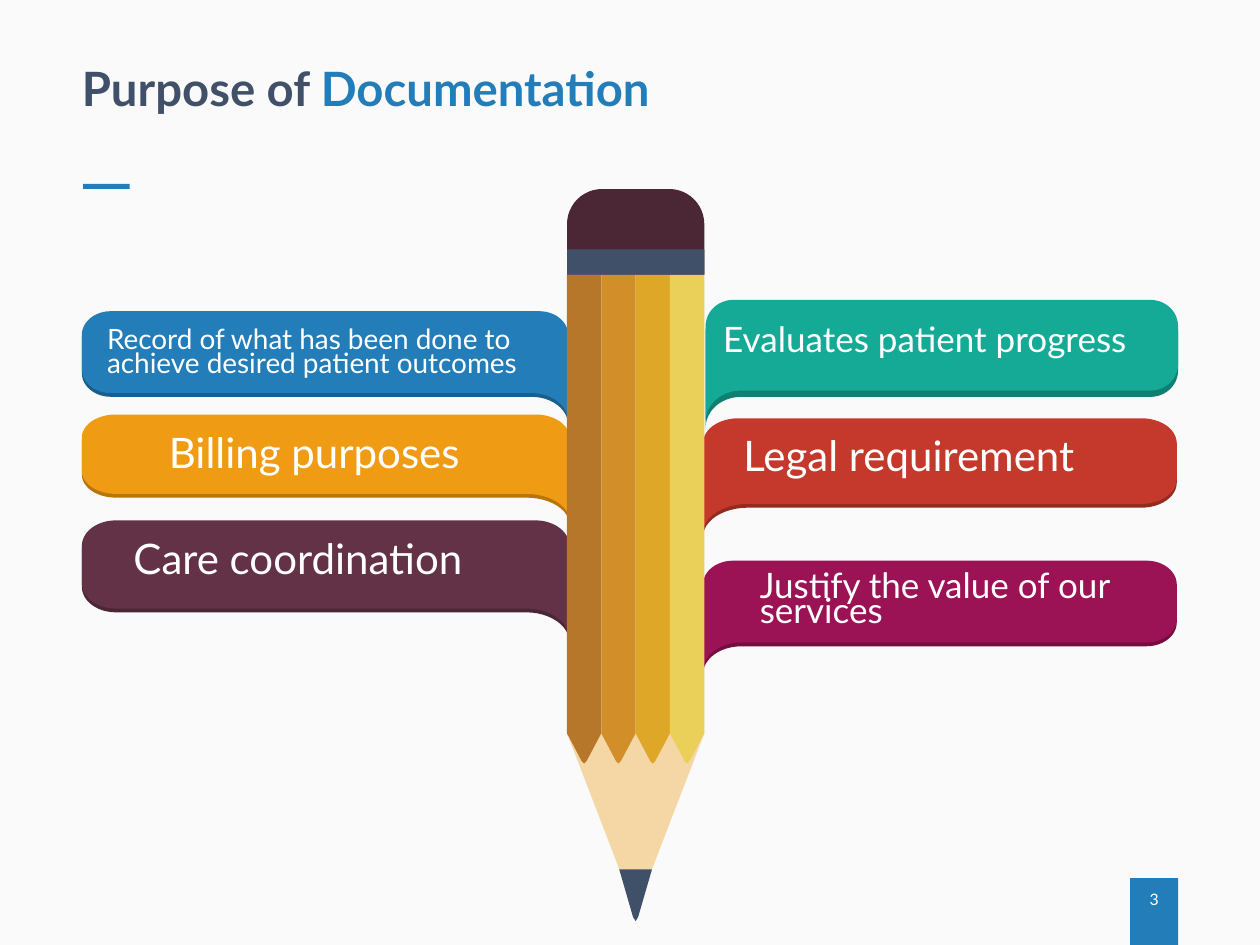
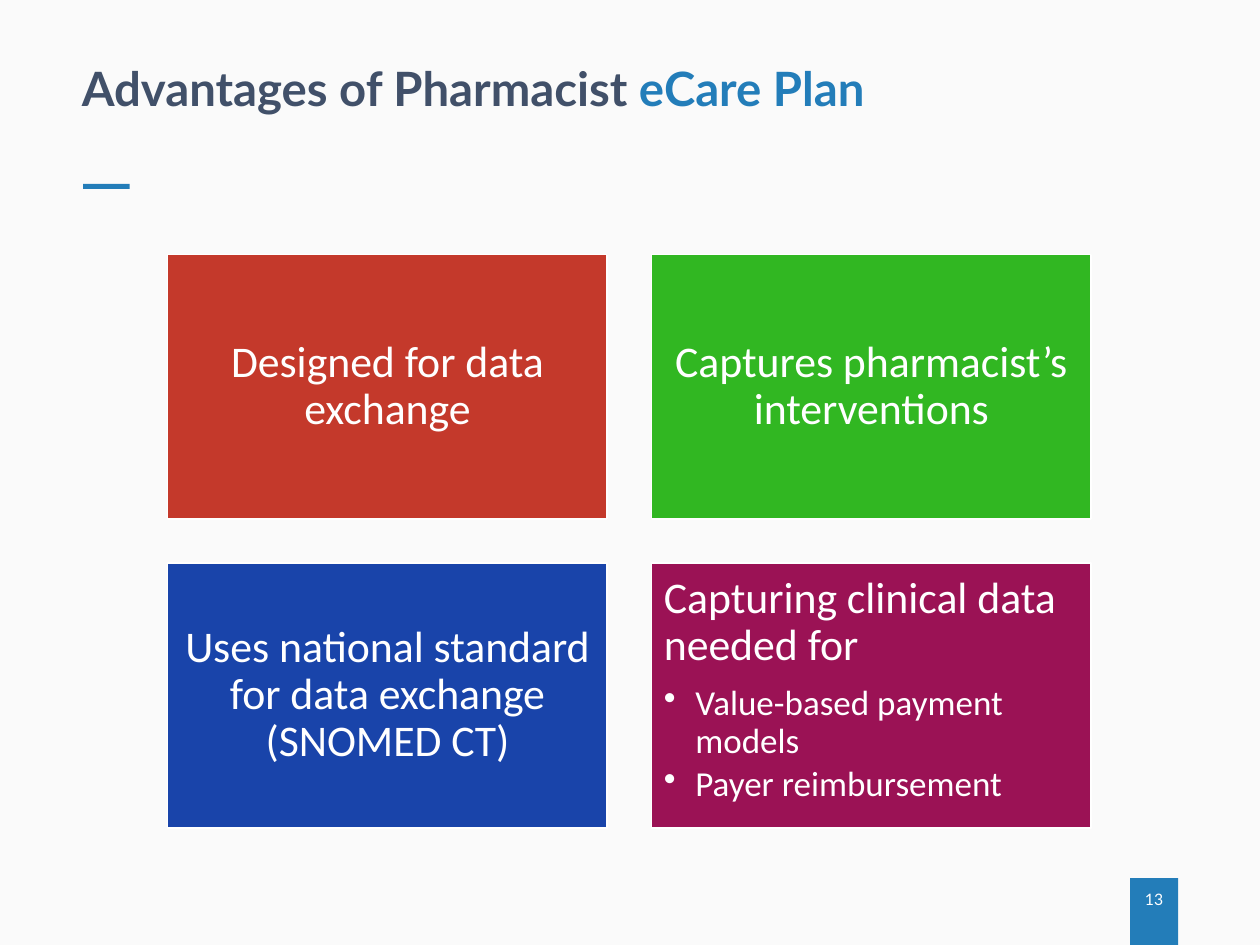
from math import cos, radians, sin

from lxml.etree import SubElement
from pptx import Presentation
from pptx.dml.color import RGBColor
from pptx.enum.shapes import MSO_SHAPE
from pptx.enum.text import MSO_ANCHOR, PP_ALIGN
from pptx.oxml.ns import qn
from pptx.util import Inches, Pt

WHITE, PAPER, SLATE, BLUE = "FFFFFF", "FAFAFA", "415069", "237DB9"
PLUM_DARK, RED, MAGENTA = "4B2634", "C4392B", "9B1255"

# outer edge, inner edge, top, corner width, body height, drop, shade, colour
BANNERS = [
    (0.65, 4.52, 3.29, 0.27, 0.63, 0.03, "B7750C", "F09B14"),
    (0.65, 4.52, 4.13, 0.27, 0.70, 0.03, PLUM_DARK, "643246"),
    (9.35, 5.60, 2.38, 0.22, 0.72, 0.05, "0F7F71", "14AA96"),
    (9.34, 5.58, 3.32, 0.28, 0.68, 0.03, "932B20", RED),
    (9.34, 5.58, 4.45, 0.24, 0.65, 0.03, "740D40", MAGENTA),
    (0.65, 4.51, 2.47, 0.23, 0.65, 0.03, "1A5E8B", BLUE),
]

# left, top, width, height, size, wording
PURPOSES = [
    (0.85, 2.62, 3.53, 0.39, 16, "Record of what has been done to achieve desired patient outcomes"),
    (1.34, 3.59, 2.83, 0.2, 24, "Billing purposes"),
    (1.06, 4.43, 3.4, 0.2, 24, "Care coordination"),
    (5.74, 2.66, 4.03, 0.2, 20, "Evaluates patient progress"),
    (5.9, 3.61, 3.29, 0.22, 24, "Legal requirement"),
    (6.03, 4.61, 3.02, 0.39, 20, "Justify the value of our services"),
]

# colour, heading, bullets
ADVANTAGES = [
    (RED, "Designed for data exchange", []),
    ("31B722", "Captures pharmacist’s interventions", []),
    ("1944AA", "Uses national standard for data exchange (SNOMED CT)", []),
    (MAGENTA, "Capturing clinical data needed for",
     ["Value-based payment models", "Payer reimbursement"]),
]


def rgb(hex_colour):
    return RGBColor.from_string(hex_colour)


def arc(center_x, center_y, radius_x, radius_y, start, end, steps=12):
    """Points along an elliptical arc; angles in degrees, clockwise from the right."""
    angles = [radians(start + (end - start) * i / steps) for i in range(steps + 1)]
    return [(center_x + radius_x * cos(a), center_y + radius_y * sin(a)) for a in angles]


def banner_outline(outer, inner, top, corner, body):
    """Rounded band whose inner end runs down into a curved tail."""
    side = 1 if inner > outer else -1
    corner_x, corner_y = side * corner, 0.29 * body
    tail_x, tail_y = 1.27 * corner_x, 0.34 * body
    bottom = top + body
    return (arc(inner - corner_x, top + corner_y, corner_x, corner_y, 0, -90)
            + arc(outer + corner_x, top + corner_y, corner_x, corner_y, -90, -180)
            + arc(outer + corner_x, bottom - corner_y, corner_x, corner_y, 180, 90)
            + arc(inner - tail_x, bottom + tail_y, tail_x, tail_y, -90, 0))


class SlideWriter:
    """Holds the deck, its style and the slide being drawn."""

    def __init__(self):
        self.deck = Presentation()
        self.deck.slide_width, self.deck.slide_height = Inches(10), Inches(7.5)
        self.page = None

    def start_page(self, number, title, accent):
        self.page = self.deck.slides.add_slide(self.deck.slide_layouts[6])
        fill = self.page.background.fill
        fill.solid()
        fill.fore_color.rgb = rgb(PAPER)
        self.shape(8.97, 6.97, 0.38, 0.53, BLUE)
        para = self.text(8.98, 7.06, 0.36, 0.15, 9, str(number))
        para.alignment = PP_ALIGN.CENTER
        self.shape(0.66, 1.46, 0.37, 0.04, BLUE)
        para = self.text(0.65, 0.52, 8.7, 0.53, 27, title)
        para.line_spacing, para.space_before = 0.9, Pt(9.2)
        para.add_run().text = accent
        self.style(para, 27, SLATE)
        para.runs[1].font.color.rgb = rgb(BLUE)
        for span in para.runs:
            span.font.bold = True

    def style(self, para, size, colour=WHITE, font="Lato"):
        for span in para.runs:
            span.font.size, span.font.name = Pt(size), font
            span.font.color.rgb = rgb(colour)

    def frame(self, shape, margin=0):
        frame = shape.text_frame
        frame.word_wrap = True
        frame.margin_left = frame.margin_right = Inches(margin)
        frame.margin_top = frame.margin_bottom = Inches(margin)
        return frame

    def text(self, left, top, width, height, size, wording):
        box = self.page.shapes.add_textbox(
            Inches(left), Inches(top), Inches(width), Inches(height))
        frame = self.frame(box)
        frame.text = wording
        para = frame.paragraphs[0]
        self.style(para, size)
        return para

    def paint(self, shape, colour):
        shape.shadow.inherit = False
        shape.fill.solid()
        shape.fill.fore_color.rgb = rgb(colour)
        shape.line.fill.background()
        return shape

    def shape(self, left, top, width, height, colour, preset=MSO_SHAPE.RECTANGLE):
        shape = self.page.shapes.add_shape(
            preset, Inches(left), Inches(top), Inches(width), Inches(height))
        return self.paint(shape, colour)

    def outline(self, points, colour):
        first, *rest = [(Inches(x), Inches(y)) for x, y in points]
        builder = self.page.shapes.build_freeform(*first)
        builder.add_line_segments(rest, close=True)
        return self.paint(builder.convert_to_shape(), colour)

    def banner(self, outer, inner, top, corner, body, drop, shade, colour):
        for offset, layer_colour in ((drop, shade), (0, colour)):
            points = banner_outline(outer, inner, top + offset, corner, body)
            self.outline(points, layer_colour)

    def pencil(self, left, width, top, shoulder):
        right, middle = left + width, left + width / 2
        self.outline([(left, shoulder), (right, shoulder), (middle + 0.09, 7),
                      (middle, 7.1), (middle - 0.09, 7)], "F5D7A5")
        self.outline([(middle - 0.13, 6.9), (middle + 0.13, 6.9), (middle + 0.02, 7.28),
                      (middle, 7.31), (middle - 0.02, 7.28)], SLATE)
        stripe = width / 4
        for i, colour in enumerate(("B7772A", "D18E29", "DEA727", "EACF59")):
            start, end = left + i * stripe, left + (i + 1) * stripe
            tip = (start + end) / 2
            self.outline([(start, top), (end, top), (end, shoulder), (tip + 0.02, 6.04),
                          (tip, 6.06), (tip - 0.02, 6.04), (start, shoulder)], colour)
        eraser = self.shape(left, top - 0.68, width, 0.68, PLUM_DARK,
                            MSO_SHAPE.ROUND_2_SAME_RECTANGLE)
        eraser.adjustments[0] = 0.41
        self.shape(left, top - 0.2, width, 0.2, SLATE)

    def bullet(self, para):
        properties = para._p.get_or_add_pPr()
        properties.set("marL", str(Inches(0.25)))
        properties.set("indent", str(-Inches(0.25)))
        SubElement(properties, qn("a:buChar")).set("char", "•")

    def card(self, left, top, width, height, colour, heading, bullets):
        card = self.shape(left, top, width, height, colour)
        card.line.color.rgb, card.line.width = rgb(WHITE), Pt(1)
        frame = self.frame(card, 0.1)
        frame.text = "\n".join([heading, *bullets])
        frame.vertical_anchor = MSO_ANCHOR.TOP if bullets else MSO_ANCHOR.MIDDLE
        for i, para in enumerate(frame.paragraphs):
            para.alignment = PP_ALIGN.LEFT if bullets else PP_ALIGN.CENTER
            para.line_spacing = 0.9
            para.space_after = Pt(3 if i else 8.75)
            self.style(para, 20 if i else 25, font="Calibri")
            if i:
                self.bullet(para)


def draw_purposes(writer):
    writer.start_page(3, "Purpose of ", "Documentation")
    for banner in BANNERS:
        writer.banner(*banner)
    for purpose in PURPOSES:
        para = writer.text(*purpose)
        para.line_spacing, para.space_after = Pt(14.1), Pt(13)
    writer.pencil(left=4.5, width=1.09, top=2.18, shoulder=5.82)


def draw_advantages(writer):
    writer.start_page(13, "Advantages of Pharmacist ", "eCare Plan")
    width, height, gap = 3.49, 2.1, 0.35
    for i, advantage in enumerate(ADVANTAGES):
        row, column = divmod(i, 2)
        writer.card(1.33 + column * (width + gap), 2.02 + row * (height + gap),
                    width, height, *advantage)


def main():
    writer = SlideWriter()
    draw_purposes(writer)
    draw_advantages(writer)
    writer.deck.save("out.pptx")


if __name__ == "__main__":
    main()
